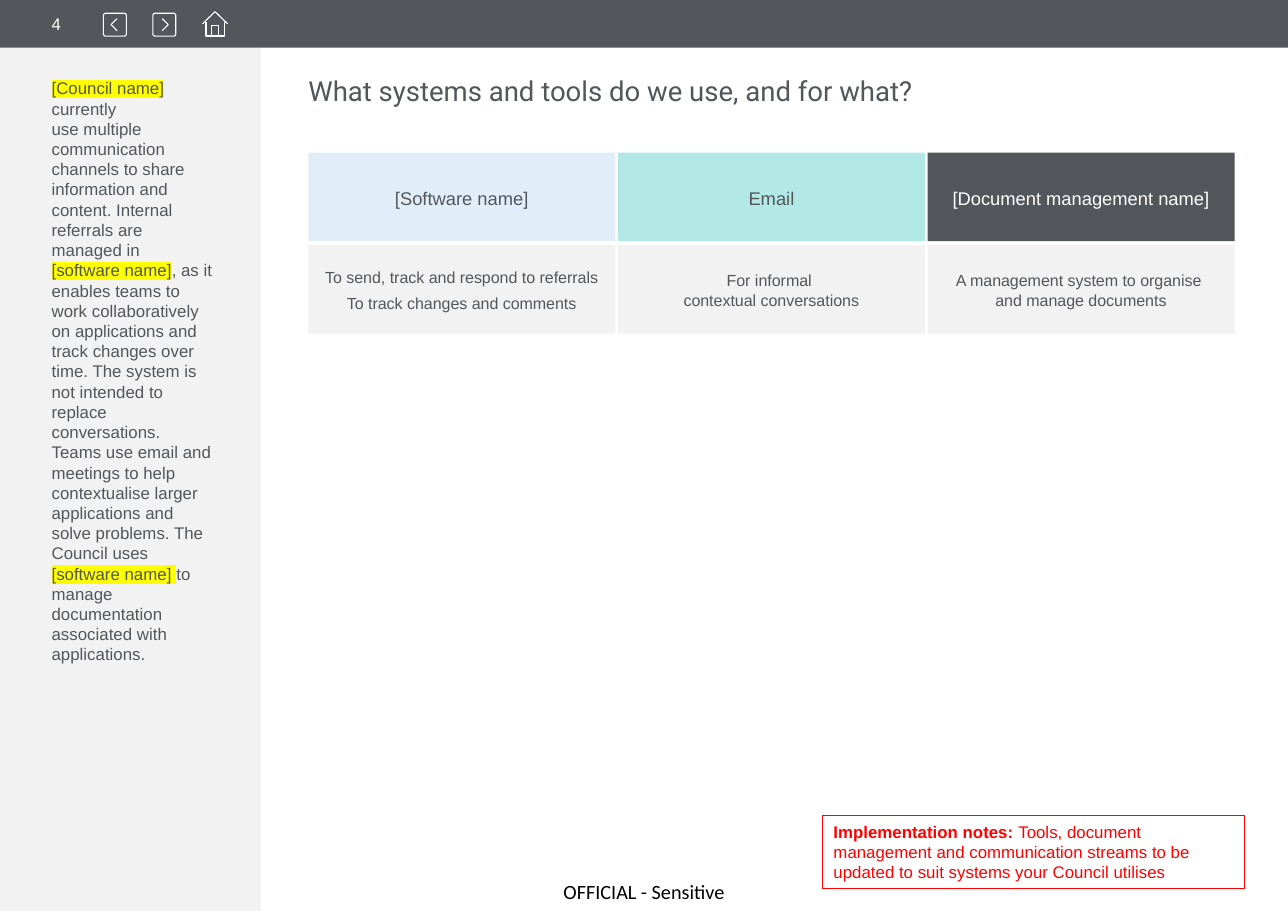
from pptx import Presentation
from pptx.dml.color import RGBColor
from pptx.enum.shapes import MSO_SHAPE as Shape
from pptx.enum.text import MSO_ANCHOR as Anchor, MSO_AUTO_SIZE as AutoSize, PP_ALIGN as Align
from pptx.oxml.ns import qn
from pptx.util import Cm, Pt
from lxml.etree import SubElement

WHITE = RGBColor(0xFF, 0xFF, 0xFF)
BLACK = RGBColor(0x00, 0x00, 0x00)
SLATE = RGBColor(0x53, 0x56, 0x5A)
PALE_GREY = RGBColor(0xF2, 0xF2, 0xF2)
PALE_BLUE = RGBColor(0xE1, 0xEE, 0xF9)
AQUA = RGBColor(0xB2, 0xE8, 0xE5)
RED = RGBColor(0xFF, 0x00, 0x00)
HIGHLIGHT = "FFFF00"

BAR_HEIGHT = 1.1
SIDEBAR_WIDTH = 6.02
CARD_LEFT, CARD_TOP = 7.11, 3.52
CARD_WIDTH, CARD_HEIGHT = 7.08, 2.04
COLUMN_STEP, ROW_STEP = 7.14, 2.13

SYSTEMS = [
    ("[Software name]", PALE_BLUE, SLATE, 3,
     ["To send, track and respond to referrals", "To track changes and comments"]),
    ("Email", AQUA, SLATE, 6, ["For informal \vcontextual conversations"]),
    ("[Document management name]", SLATE, WHITE, 6,
     ["A management system to organise \vand manage documents"]),
]

# Each span is its text and whether it is highlighted.
SIDEBAR_SPANS = [
    ("[Council name] ", True),
    ("currently\vuse multiple communication channels to share information and "
     "content. Internal referrals are managed in ", False),
    ("[software name]", True),
    (", as it enables teams to work collaboratively on applications and track "
     "changes over time. The system is not intended to replace conversations. "
     "Teams use email and meetings to help contextualise larger applications "
     "and solve problems. The Council uses ", False),
    ("[software name] ", True),
    ("to manage documentation associated with applications.", False),
]


def style(para, size, color, name="Arial", align=Align.LEFT):
    para.alignment = align
    para.font.size = Pt(size)
    para.font.name = name
    para.font.color.rgb = color


def set_frame(box, anchor, inset=(0, 0)):
    frame = box.text_frame
    frame.word_wrap = True
    frame.auto_size = AutoSize.NONE
    frame.vertical_anchor = anchor
    frame.margin_left = frame.margin_right = Cm(inset[0])
    frame.margin_top = frame.margin_bottom = Cm(inset[1])
    return frame


def place(box, left, top, width, height):
    box.left, box.top = Cm(left), Cm(top)
    box.width, box.height = Cm(width), Cm(height)


def add_block(page, left, top, width, height, fill=None, line=None, kind=Shape.RECTANGLE):
    block = page.shapes.add_shape(kind, Cm(left), Cm(top), Cm(width), Cm(height))
    block.shadow.inherit = False
    if fill is None:
        block.fill.background()
    else:
        block.fill.solid()
        block.fill.fore_color.rgb = fill
    if line is None:
        block.line.fill.background()
    else:
        block.line.color.rgb = line
        block.line.width = Pt(0.75)
    return block


def add_label(page, text, left, top, width, height, **font):
    box = page.shapes.add_textbox(Cm(left), Cm(top), Cm(width), Cm(height))
    para = set_frame(box, Anchor.MIDDLE).paragraphs[0]
    para.text = text
    style(para, **font)


def add_stroke(page, points):
    """Draw a thin white open line through the points."""
    start, *rest = [(Cm(x), Cm(y)) for x, y in points]
    builder = page.shapes.build_freeform(*start)
    builder.add_line_segments(rest, close=False)
    stroke = builder.convert_to_shape()
    stroke.shadow.inherit = False
    stroke.fill.background()
    stroke.line.color.rgb = WHITE
    stroke.line.width = Pt(0.75)


def add_arrow_button(page, center, direction):
    """Direction is -1 for back and 1 for forward."""
    middle, side = 0.57, 0.53
    frame = add_block(page, center - side / 2, middle - side / 2, side, side,
                      line=WHITE, kind=Shape.ROUNDED_RECTANGLE)
    frame.adjustments[0] = 0.1
    tail, tip = center - 0.05 * direction, center + 0.09 * direction
    add_stroke(page, [(tail, middle - 0.14), (tip, middle), (tail, middle + 0.14)])


def add_home_button(page):
    add_stroke(page, [(4.67, 0.55), (4.96, 0.27), (5.25, 0.55)])
    add_stroke(page, [(4.75, 0.5), (4.75, 0.83), (5.17, 0.83), (5.17, 0.5)])
    add_stroke(page, [(4.88, 0.83), (4.88, 0.59), (5.04, 0.59), (5.04, 0.83)])


def add_card(page, column, row, texts, fill, size, color, space_after):
    card = add_block(page, CARD_LEFT + column * COLUMN_STEP, CARD_TOP + row * ROW_STEP,
                     CARD_WIDTH, CARD_HEIGHT, fill)
    frame = set_frame(card, Anchor.MIDDLE, (0.25, 0.13))
    for index, text in enumerate(texts):
        para = frame.add_paragraph() if index else frame.paragraphs[0]
        para.text = text
        para.line_spacing = 1.07
        para.space_after = Pt(space_after)
        style(para, size, color, align=Align.CENTER)


def add_span(para, text, highlighted):
    for index, line in enumerate(text.split("\v")):
        if index:
            para.add_line_break()
        span = para.add_run()
        span.text = line
        if highlighted:
            mark = SubElement(span._r.get_or_add_rPr(), qn("a:highlight"))
            SubElement(mark, qn("a:srgbClr"), val=HIGHLIGHT)


def fill_title(title):
    place(title, CARD_LEFT, 1.6, 21.39, 0.97)
    para = set_frame(title, Anchor.TOP, (0, 0.1)).paragraphs[0]
    para.text = "What systems and tools do we use, and for what?"
    para.space_before = Pt(0)
    style(para, 18, SLATE, "Roboto")


def fill_sidebar(body):
    place(body, 1.19, 1.8, 3.71, 18.01)
    para = set_frame(body, Anchor.TOP).paragraphs[0]
    for text, highlighted in SIDEBAR_SPANS:
        add_span(para, text, highlighted)
    properties = para._p.get_or_add_pPr()
    properties.set("marL", "0")
    properties.set("indent", "0")
    SubElement(properties, qn("a:buNone"))
    para.space_before = Pt(0)
    para.space_after = Pt(9)
    style(para, 11, SLATE)


def add_implementation_notes(page):
    box = add_block(page, 18.97, 18.8, 9.73, 1.68, line=RED)
    para = set_frame(box, Anchor.MIDDLE, (0.25, 0.13)).paragraphs[0]
    heading = para.add_run()
    heading.text = "Implementation notes: "
    heading.font.bold = True
    para.add_run().text = ("Tools, document management and communication streams "
                           "to be updated to suit systems your Council utilises")
    style(para, 11, RED)


def main():
    deck = Presentation()
    deck.slide_width, deck.slide_height = Cm(29.7), Cm(21)
    page = deck.slides.add_slide(deck.slide_layouts[1])
    title, body = page.placeholders

    sidebar = add_block(page, 0, BAR_HEIGHT, SIDEBAR_WIDTH, 21 - BAR_HEIGHT, PALE_GREY)
    page.shapes._spTree.insert(2, sidebar._element)
    add_block(page, 0, 0, 29.7, BAR_HEIGHT, SLATE)
    add_label(page, "4", 1.19, 0, 1, BAR_HEIGHT, size=11, color=WHITE)
    add_arrow_button(page, 2.65, -1)
    add_arrow_button(page, 3.79, 1)
    add_home_button(page)

    fill_title(title)
    fill_sidebar(body)
    for column, (name, fill, color, space_after, uses) in enumerate(SYSTEMS):
        add_card(page, column, 0, [name], fill, 12, color, space_after)
        add_card(page, column, 1, uses, PALE_GREY, 10.5, SLATE, space_after)
    add_implementation_notes(page)
    add_label(page, "OFFICIAL - Sensitive", 12.45, 20.27, 4.8, 0.56,
              size=13.2, color=BLACK, name="Calibri", align=Align.CENTER)

    deck.save("out.pptx")


if __name__ == "__main__":
    main()
